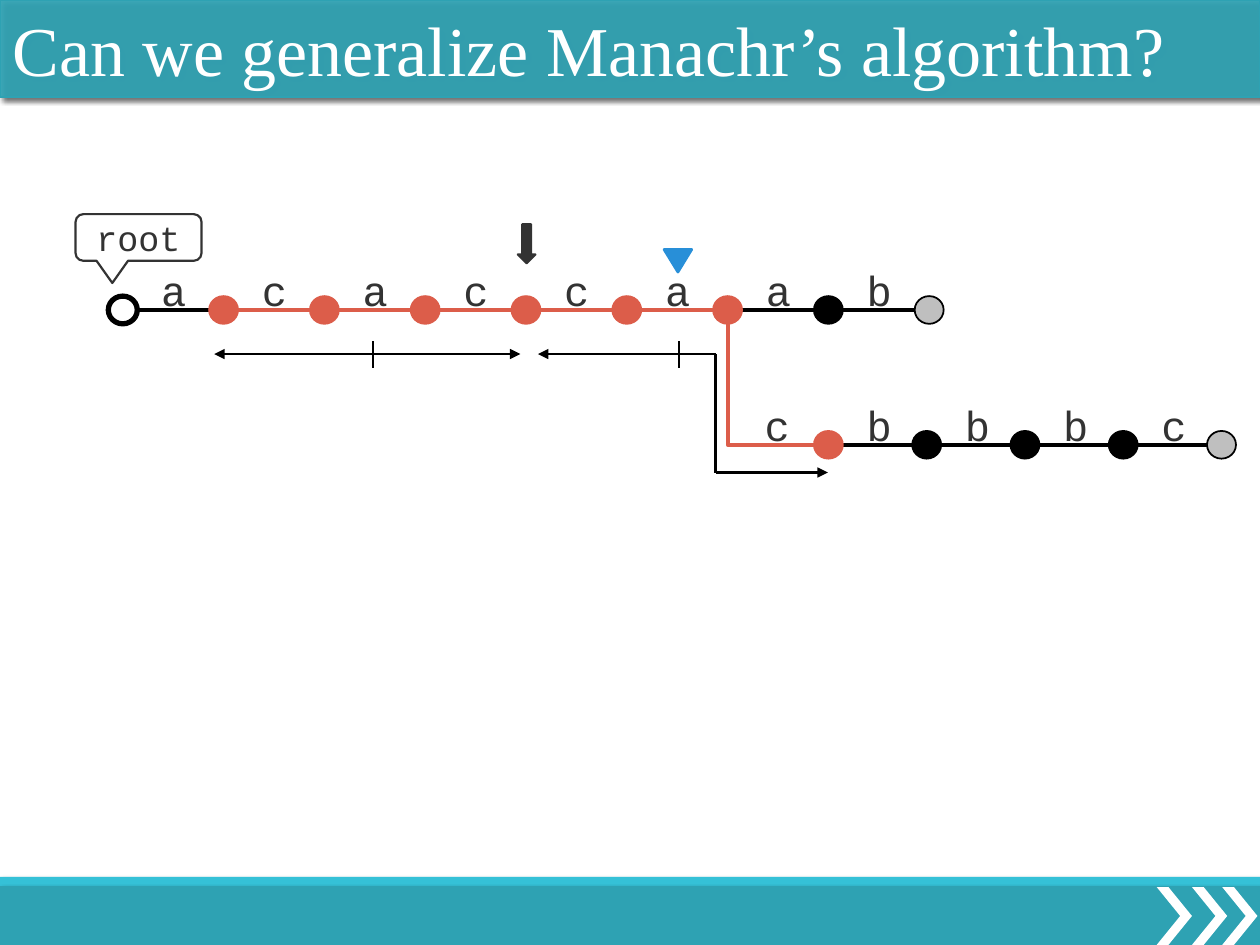
from pptx import Presentation
from pptx.dml.color import RGBColor
from pptx.enum.shapes import MSO_CONNECTOR as CXN, MSO_SHAPE as SHAPE
from pptx.enum.text import MSO_ANCHOR as ANCHOR, MSO_AUTO_SIZE as AUTO, PP_ALIGN as ALIGN
from pptx.oxml.ns import qn
from pptx.util import Inches, Pt
from lxml.etree import SubElement

TEAL, CYAN, WHITE, BLACK = "2EA2B3", "35C1D7", "FFFFFF", "000000"
RED, GREY, DARK, BLUE = "DC5D4A", "BFBFBF", "333333", "288FD8"
NODE_W, NODE_H = 0.23, 0.22
TOP_X, TOP_Y, TOP_STEP = 0.86, 2.46, 0.8
LOW_X, LOW_Y, LOW_STEP = 6.46, 3.53, 0.78


def rgb(color):
    return RGBColor.from_string(color)


def paint(sp, fill, line=None, width=1):
    sp.fill.solid()
    sp.fill.fore_color.rgb = rgb(fill)
    if line:
        sp.line.color.rgb = rgb(line)
        sp.line.width = Pt(width)
    else:
        sp.line.fill.background()
    sp.shadow.inherit = False


def add_shape(slide, kind, x, y, w, h, fill, line=None, width=1, adj=()):
    sp = slide.shapes.add_shape(kind, Inches(x), Inches(y), Inches(w), Inches(h))
    for i, value in enumerate(adj):
        sp.adjustments[i] = value
    paint(sp, fill, line, width)
    return sp


def drop_shadow(sp):
    effects = sp._element.spPr.find(qn("a:effectLst"))
    shadow = SubElement(effects, qn("a:outerShdw"), blurRad=str(Pt(3)),
                        dist=str(Pt(2)), dir=str(45 * 60000), rotWithShape="0")
    color = SubElement(shadow, qn("a:srgbClr"), val=BLACK)
    SubElement(color, qn("a:alpha"), val="60000")


def add_line(slide, start, end, color=BLACK, width=1.5, kind=CXN.STRAIGHT, arrows=()):
    cxn = slide.shapes.add_connector(kind, *(Inches(v) for v in (*start, *end)))
    cxn.line.color.rgb = rgb(color)
    cxn.line.width = Pt(width)
    props = cxn._element.spPr
    for name in arrows:
        SubElement(props.find(qn("a:ln")), qn(f"a:{name}"), type="triangle")
    SubElement(props, qn("a:effectLst"))
    return cxn


def write(tf, text, size, font, color, align=ALIGN.LEFT, anchor=ANCHOR.TOP):
    tf.vertical_anchor = anchor
    p = tf.paragraphs[0]
    p.alignment = align
    r = p.add_run()
    r.text = text
    r.font.size, r.font.name = Pt(size), font
    r.font.color.rgb = rgb(color)


def add_label(slide, x, y, text):
    tf = slide.shapes.add_textbox(Inches(x), Inches(y), Inches(0.4), Inches(0.5)).text_frame
    tf.word_wrap = False
    write(tf, text, 24, "Courier New", DARK)


def add_title(slide, text):
    title = slide.shapes.title
    title.left, title.top, title.width, title.height = 0, 0, Inches(10), Inches(0.77)
    paint(title, TEAL, TEAL)
    color = title._element.spPr.find(f"{qn('a:solidFill')}/{qn('a:srgbClr')}")
    SubElement(color, qn("a:alpha"), val="92000")
    drop_shadow(title)
    title.text_frame.auto_size = AUTO.NONE
    write(title.text_frame, text, 40, "Times New Roman", WHITE)


def add_footer(slide):
    drop_shadow(add_shape(slide, SHAPE.RECTANGLE, 0, 6.96, 10, 0.24, CYAN))
    drop_shadow(add_shape(slide, SHAPE.RECTANGLE, 0, 7.04, 10, 0.46, TEAL, TEAL))
    for x in (9.18, 9.46, 9.7):
        add_shape(slide, SHAPE.CHEVRON, x, 7.04, 0.28, 0.46, WHITE, adj=[0.667])


def add_chain(slide, x, y, step, nodes, letters, edges):
    """Draw a row of nodes, with a lettered edge between neighbours."""
    for i, (letter, color) in enumerate(zip(letters, edges)):
        left = x + i * step
        add_line(slide, (left + NODE_W - 0.01, y), (left + step + 0.01, y), color, 2.25)
        add_label(slide, left + 0.32, y - 0.41, letter)
    for i, (fill, line, width) in enumerate(nodes):
        add_shape(slide, SHAPE.OVAL, x + i * step, y - NODE_H / 2, NODE_W, NODE_H,
                  fill, line, width)


def add_trie(slide):
    root, leaf = (WHITE, BLACK, 3), (GREY, BLACK, 1)
    red, black = (RED, RED, 1), (BLACK, BLACK, 1)
    # Branch from the seventh node down to the lower row
    branch_x = TOP_X + 6 * TOP_STEP + NODE_W / 2
    branch = add_line(slide, (LOW_X, LOW_Y), (branch_x, TOP_Y + NODE_H / 2),
                      RED, 2.25, CXN.ELBOW)
    branch._element.spPr.find(qn("a:prstGeom")).set("prst", "bentConnector2")
    add_label(slide, 5.97, LOW_Y - 0.41, "c")
    # Upper and lower rows
    add_chain(slide, TOP_X, TOP_Y, TOP_STEP, [root] + [red] * 6 + [black, leaf],
              "acaccaab", [BLACK] + [RED] * 5 + [BLACK] * 2)
    add_chain(slide, LOW_X, LOW_Y, LOW_STEP, [red] + [black] * 3 + [leaf],
              "bbbc", [BLACK] * 4)


def add_spans(slide):
    # Straight span, then one that bends down the branch
    add_line(slide, (1.7, 2.81), (4.13, 2.81), arrows=("headEnd", "tailEnd"))
    add_line(slide, (4.27, 2.81), (5.68, 2.81), arrows=("headEnd",))
    add_line(slide, (5.68, 2.81), (5.68, 3.75))
    add_line(slide, (5.68, 3.75), (6.57, 3.75), arrows=("tailEnd",))
    # Centre ticks
    for x in (2.96, 5.39):
        add_line(slide, (x, 2.71), (x, 2.92))


def add_markers(slide):
    callout = add_shape(slide, SHAPE.ROUNDED_RECTANGULAR_CALLOUT, 0.6, 1.7, 1, 0.37,
                        WHITE, DARK, 1.25, adj=[-0.208, 0.977, 0.167])
    write(callout.text_frame, "root", 20, "Courier New", DARK, ALIGN.CENTER, ANCHOR.MIDDLE)
    pointer = add_shape(slide, SHAPE.ISOSCELES_TRIANGLE, 5.27, 1.98, 0.22, 0.18,
                        BLUE, BLUE, 1.5)
    pointer.rotation = 180
    add_shape(slide, SHAPE.DOWN_ARROW, 4.11, 1.78, 0.14, 0.31, DARK, DARK, 1.25)


def main():
    prs = Presentation()
    prs.slide_width, prs.slide_height = Inches(10), Inches(7.5)
    slide = prs.slides.add_slide(prs.slide_layouts[5])
    add_title(slide, "Can we generalize Manachr’s algorithm?")
    add_footer(slide)
    add_trie(slide)
    add_spans(slide)
    add_markers(slide)
    prs.save("out.pptx")


if __name__ == "__main__":
    main()
